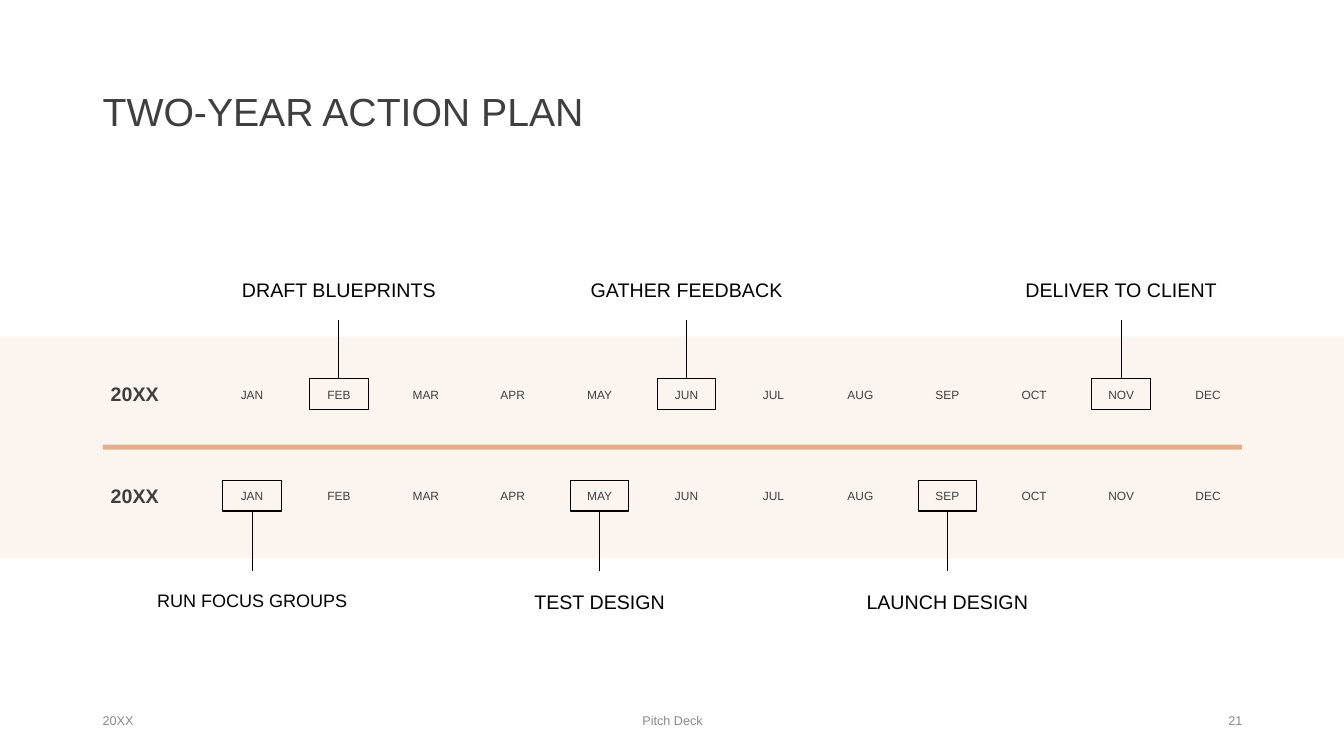
from lxml.etree import SubElement
from pptx import Presentation
from pptx.dml.color import RGBColor
from pptx.enum.shapes import MSO_CONNECTOR, MSO_SHAPE
from pptx.enum.text import MSO_ANCHOR, PP_ALIGN
from pptx.oxml.ns import qn
from pptx.util import Inches, Pt

WIDE, HIGH = 13.33, 7.5
FONT = "Arial"
COLORS = {"band": "FBF4EF", "rule": "E2B08C", "dark": "3F3F3F",
          "black": "000000", "gray": "888888"}
MONTHS = "JAN FEB MAR APR MAY JUN JUL AUG SEP OCT NOV DEC".split()
FIRST, STEP = 2.5, 0.862
BOX_W, BOX_H, STEM = 0.58, 0.3, 0.59
LEFT, CENTER, RIGHT = PP_ALIGN.LEFT, PP_ALIGN.CENTER, PP_ALIGN.RIGHT
TOP, MIDDLE, BOTTOM = MSO_ANCHOR.TOP, MSO_ANCHOR.MIDDLE, MSO_ANCHOR.BOTTOM


def color(name):
    """Return the named colour."""
    return RGBColor.from_string(COLORS[name])


def add_text(slide, box, text, size, tint, align=LEFT, anchor=MIDDLE,
             space=1.0, bold=False):
    """Place one line of text in a box."""
    frame = slide.shapes.add_textbox(*map(Inches, box)).text_frame
    frame.word_wrap = True
    frame.vertical_anchor = anchor
    para = frame.paragraphs[0]
    para.alignment = align
    para.line_spacing = space
    run = para.add_run()
    run.text = text
    run.font.name = FONT
    run.font.size = Pt(size)
    run.font.bold = bold
    run.font.color.rgb = color(tint)


def add_rect(slide, box, fill=None):
    """Draw a filled rectangle, or a thin black frame without a fill."""
    rect = slide.shapes.add_shape(MSO_SHAPE.RECTANGLE, *map(Inches, box))
    rect.shadow.inherit = False
    if fill:
        rect.fill.solid()
        rect.fill.fore_color.rgb = color(fill)
        rect.line.fill.background()
    else:
        rect.fill.background()
        rect.line.color.rgb = color("black")
        rect.line.width = Pt(0.75)
    return rect


def add_goal(slide, mid, top, text, size, above):
    """Frame a month and tie it to its goal above or below."""
    frame = add_rect(slide, (mid - BOX_W / 2, top, BOX_W, BOX_H))
    start = top if above else top + BOX_H
    end = start - STEM if above else start + STEM
    stem = slide.shapes.add_connector(
        MSO_CONNECTOR.STRAIGHT, *map(Inches, (mid, start, mid, end)))
    stem.begin_connect(frame, 0 if above else 2)
    stem.line.color.rgb = color("black")
    stem.line.width = Pt(0.75)
    SubElement(stem._element.spPr, qn("a:effectLst"))
    label = top - 1.33 if above else top + 0.92
    add_text(slide, (mid - 1.125, label, 2.25, 0.61), text, size, "black",
             CENTER, BOTTOM if above else TOP, 1.5)


def add_year(slide, top, goals, above):
    """Lay out one year of months with its goals."""
    add_text(slide, (1, top - 0.09, 0.8, 0.5), "20XX", 14, "dark",
             space=0.9, bold=True)
    for col, month in enumerate(MONTHS):
        mid = FIRST + col * STEP
        add_text(slide, (mid - 0.35, top + 0.07, 0.7, 0.22), month, 8.5,
                 "dark", CENTER, TOP, 0.7)
        if month in goals:
            add_goal(slide, mid, top, *goals[month], above)


def add_foot(slide, top):
    """Place the date, deck name and page number."""
    for left, width, text, align in (
            (0.92, 3, "20XX", LEFT),
            (4.42, 4.5, "Pitch Deck", CENTER),
            (9.42, 3, "21", RIGHT)):
        add_text(slide, (left, top, width, 0.4), text, 9, "gray", align)


def add_plan(deck):
    """Build the two-year plan slide."""
    slide = deck.slides.add_slide(deck.slide_layouts[6])
    add_rect(slide, (0, 3.34, WIDE, 2.2), "band")
    add_rect(slide, (1.02, 4.41, 11.3, 0.05), "rule")
    add_text(slide, (0.92, 0.4, 11.5, 1.45), "TWO-YEAR ACTION PLAN", 28,
             "dark", space=0.9)
    add_year(slide, 3.76, {"FEB": ("DRAFT BLUEPRINTS", 14),
                           "JUN": ("GATHER FEEDBACK", 14),
                           "NOV": ("DELIVER TO CLIENT", 14)}, True)
    add_year(slide, 4.77, {"JAN": ("RUN FOCUS GROUPS", 12.9),
                           "MAY": ("TEST DESIGN", 14),
                           "SEP": ("LAUNCH DESIGN", 14)}, False)
    add_foot(slide, 6.95)


def main():
    """Make the deck and save it."""
    deck = Presentation()
    deck.slide_width, deck.slide_height = Inches(WIDE), Inches(HIGH)
    add_plan(deck)
    deck.save("out.pptx")


if __name__ == "__main__":
    main()
